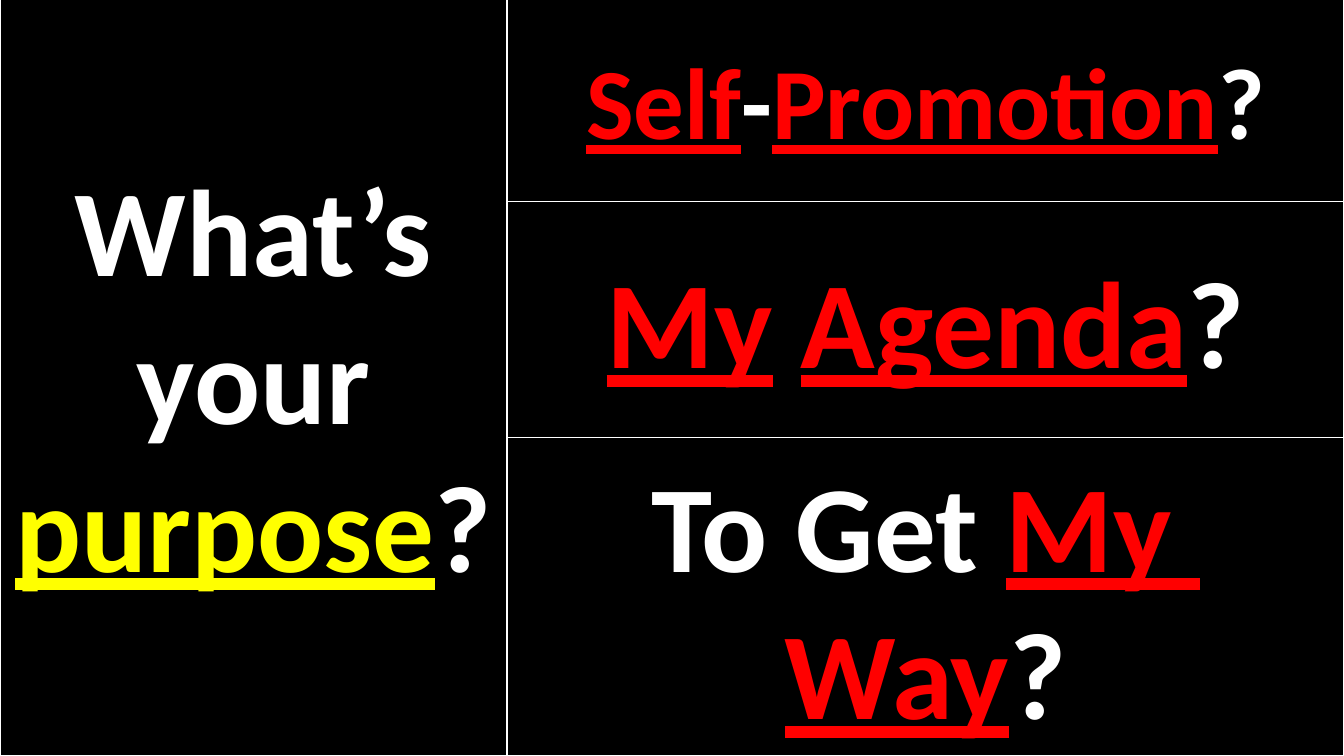
from dataclasses import dataclass

from pptx import Presentation
from pptx.dml.color import RGBColor
from pptx.enum.shapes import MSO_SHAPE
from pptx.enum.text import MSO_ANCHOR, PP_ALIGN
from pptx.util import Emu, Pt

RECTANGLE = MSO_SHAPE.RECTANGLE
MIDDLE = MSO_ANCHOR.MIDDLE
CENTER = PP_ALIGN.CENTER

PX = 9144
WIDTH, HEIGHT = 1333, 750
SPLIT = 503
BLACK, WHITE, RED, YELLOW = "000000", "FFFFFF", "FF0000", "FFFF00"


@dataclass(frozen=True)
class Span:
    text: str
    color: str = WHITE
    underline: bool = False


@dataclass(frozen=True)
class Panel:
    left: int
    top: int
    right: int
    bottom: int
    size: int
    spans: tuple[Span, ...]


def marked(text: str, color: str = RED) -> Span:
    """Return an underlined, coloured span."""
    return Span(text, color, True)


QUESTION = Panel(0, -6, SPLIT, HEIGHT, 88,
                 (Span("What’s your "), marked("purpose", YELLOW), Span("?")))
ANSWERS = (
    (-3, 200, 72, (marked("Self"), Span("-"), marked("Promotion"), Span("?"))),
    (200, 434, 88, (marked("My"), Span(" ", RED), marked("Agenda"), Span("?"))),
    (434, HEIGHT, 88, (Span("To Get "), marked("My "), Span(" ", RED),
                       marked("Way"), Span("?"))),
)
PANELS = (QUESTION, *(Panel(SPLIT, top, WIDTH, bottom, size, spans)
                      for top, bottom, size, spans in ANSWERS))


def px(length: int) -> Emu:
    """Turn a length in px into EMU."""
    return Emu(length * PX)


def rgb(color: str) -> RGBColor:
    """Turn a hex string into a colour."""
    return RGBColor.from_string(color)


def draw_panel(slide, panel: Panel) -> None:
    """Draw one outlined panel with its centred text."""
    box = slide.shapes.add_shape(
        RECTANGLE, px(panel.left), px(panel.top),
        px(panel.right - panel.left), px(panel.bottom - panel.top))
    box.shadow.inherit = False
    box.fill.solid()
    box.fill.fore_color.rgb = rgb(BLACK)
    box.line.color.rgb = rgb(WHITE)
    box.line.width = Pt(1)
    frame = box.text_frame
    frame.word_wrap = True
    frame.vertical_anchor = MIDDLE
    para = frame.paragraphs[0]
    para.alignment = CENTER
    for span in panel.spans:
        run = para.add_run()
        run.text = span.text
        format_values = {"name": "Calibri", "size": Pt(panel.size),
                         "bold": True, "underline": span.underline}
        for name, value in format_values.items():
            setattr(run.font, name, value)
        run.font.color.rgb = rgb(span.color)


def main() -> None:
    """Build the slide and save the deck."""
    deck = Presentation()
    deck.slide_width, deck.slide_height = px(WIDTH), px(HEIGHT)
    page = deck.slides.add_slide(deck.slide_layouts[6])
    page.background.fill.solid()
    page.background.fill.fore_color.rgb = rgb(BLACK)
    for panel in PANELS:
        draw_panel(page, panel)
    deck.save("out.pptx")


if __name__ == "__main__":
    main()
